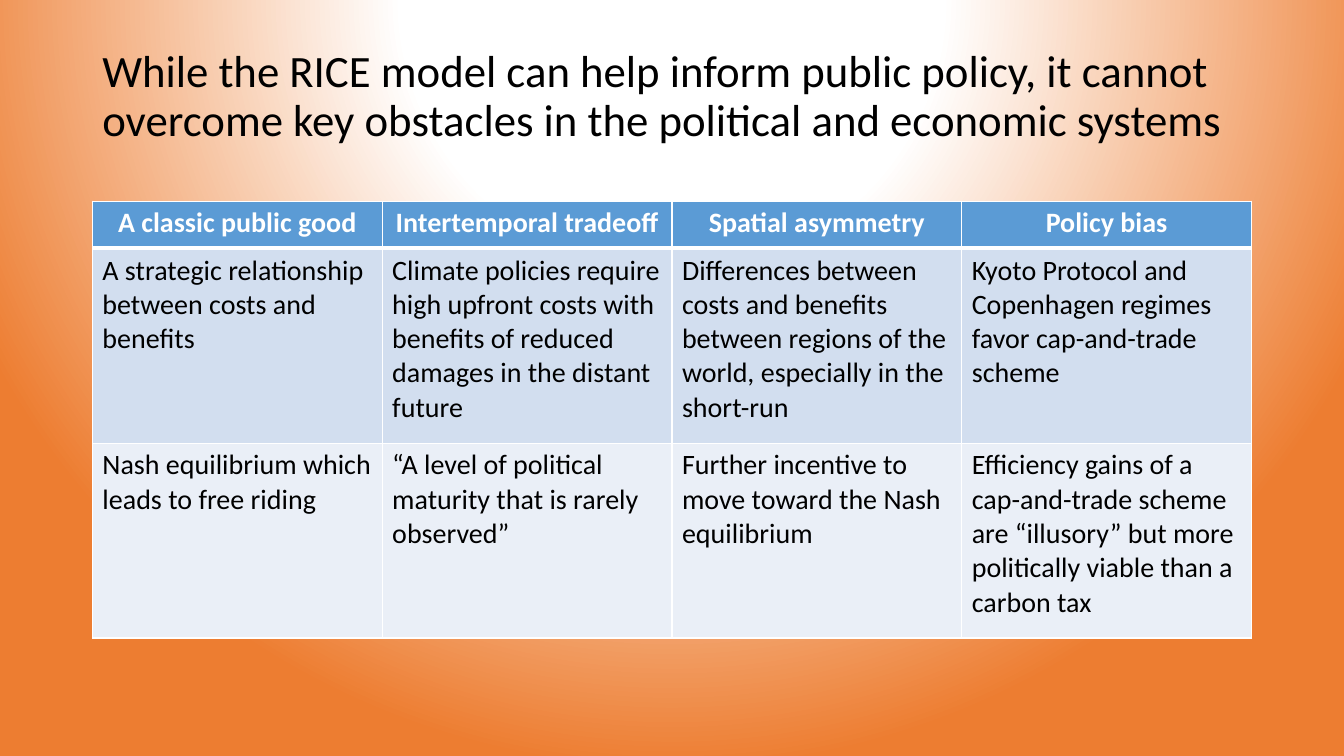
from pptx import Presentation, util as u
from pptx.dml import color
from pptx.enum import text
from pptx.oxml import parse_xml, ns

Pt = u.Pt
THEME = {
    "font": "Calibri",
    "title_size": 32,
    "table_size": 20,
    "ink": "000000",
    "light": "FFFFFF",
    "glow": "ED7D31",
    "rows": ["5B9BD5", "D2DEEF", "EAEFF7"],
}
TABLE = [
    ["A classic public good", "Intertemporal tradeoff", "Spatial asymmetry", "Policy bias"],
    [
        "A strategic relationship between costs and benefits",
        "Climate policies require high upfront costs with benefits of reduced damages in the distant future",
        "Differences between costs and benefits between regions of the world, especially in the short-run",
        "Kyoto Protocol and Copenhagen regimes favor cap-and-trade scheme",
    ],
    [
        "Nash equilibrium which leads to free riding",
        "“A level of political maturity that is rarely observed”",
        "Further incentive to move toward the Nash equilibrium",
        "Efficiency gains of a cap-and-trade scheme are “illusory” but more politically viable than a carbon tax",
    ],
]
ROW_HEIGHTS = [33.6, 139.2, 139.2]
LEFT, WIDTH = 66, 828


def write(tf, words, ink, size, bold=False, **layout):
    p = tf.paragraphs[0]
    for name, value in layout.items():
        setattr(p, name, value)
    r = p.add_run()
    r.text = words
    for name, value in {"name": THEME["font"], "size": Pt(size), "bold": bold}.items():
        setattr(r.font, name, value)
    r.font.color.rgb = color.RGBColor.from_string(ink)


def add_border(cell, side, width):
    cell._tc.get_or_add_tcPr().append(parse_xml(
        f'<a:ln{side} {ns.nsdecls("a")} w="{Pt(width)}"><a:solidFill>'
        f'<a:srgbClr val="{THEME["light"]}"/></a:solidFill></a:ln{side}>'
    ))


prs = Presentation()
prs.slide_width, prs.slide_height = Pt(960), Pt(540)
s = prs.slides.add_slide(prs.slide_layouts[6])

stops = "".join(
    f'<a:gs pos="{place * 1000}"><a:srgbClr val="{THEME[name]}"/></a:gs>'
    for place, name in [(0, "light"), (35, "light"), (100, "glow")]
)
s.element.cSld.insert(0, parse_xml(
    f'<p:bg {ns.nsdecls("p", "a")}><p:bgPr><a:gradFill rotWithShape="1">'
    f'<a:gsLst>{stops}</a:gsLst><a:path path="circle">'
    '<a:fillToRect l="50000" t="-80000" r="50000" b="180000"/></a:path>'
    '</a:gradFill><a:effectLst/></p:bgPr></p:bg>'
))

title = s.shapes.add_textbox(Pt(LEFT), Pt(28.75), Pt(WIDTH), Pt(82))
tf = title.text_frame
for name, value in {"word_wrap": True, "vertical_anchor": text.MSO_ANCHOR.MIDDLE}.items():
    setattr(tf, name, value)
write(
    tf,
    "While the RICE model can help inform public policy, "
    "it cannot overcome key obstacles in the political and economic systems",
    THEME["ink"], THEME["title_size"], line_spacing=0.9,
)

table = s.shapes.add_table(
    len(TABLE), len(TABLE[0]), Pt(LEFT), Pt(143.75), Pt(WIDTH), Pt(sum(ROW_HEIGHTS))
).table
for i, (row, height) in enumerate(zip(TABLE, ROW_HEIGHTS)):
    table.rows[i].height = Pt(height)
    header = i == 0
    for j, words in enumerate(row):
        cell = table.cell(i, j)
        widths = {"L": 1, "R": 1, "T": 3 if i == 1 else 1, "B": 3 if header else 1}
        for side, width in widths.items():
            add_border(cell, side, width)
        cell.fill.solid()
        cell.fill.fore_color.rgb = color.RGBColor.from_string(THEME["rows"][i])
        write(
            cell.text_frame, words, THEME["light" if header else "ink"],
            THEME["table_size"], bold=header,
            alignment=text.PP_ALIGN.CENTER if header else text.PP_ALIGN.LEFT,
        )

prs.save("out.pptx")
